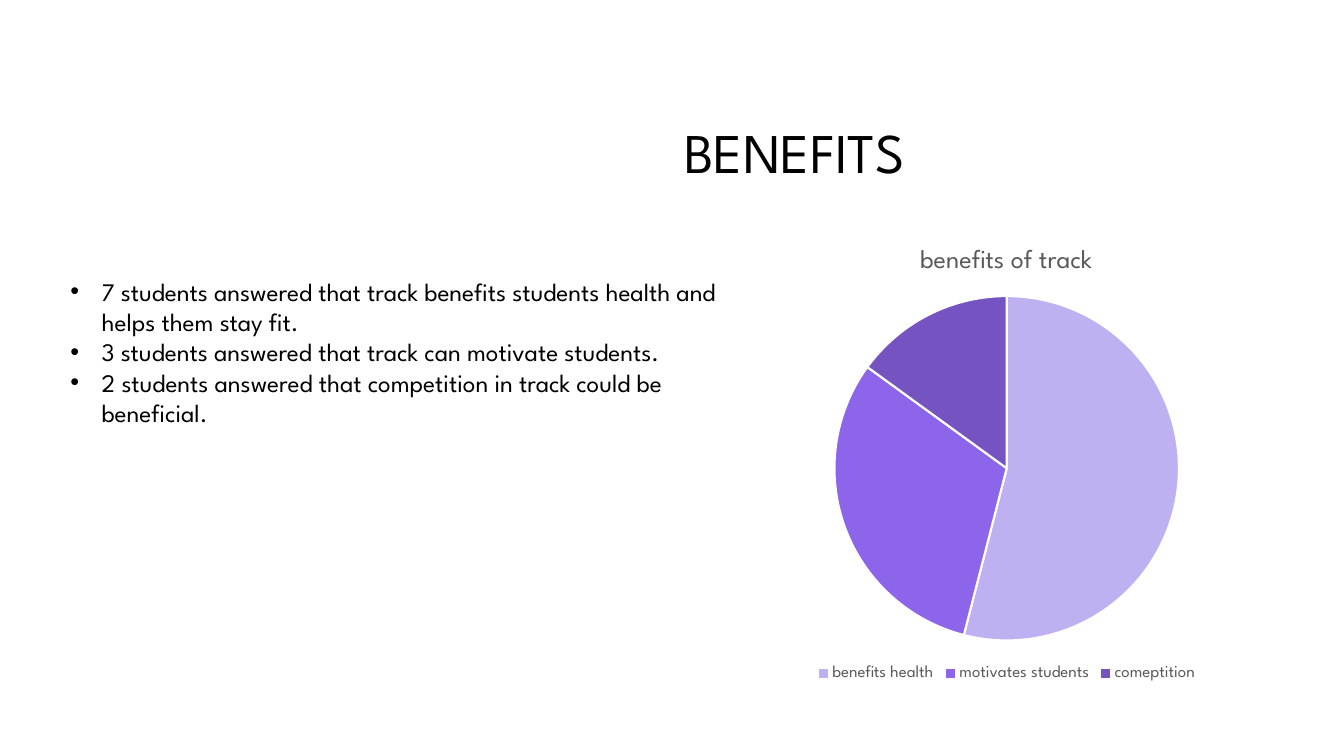
"""Build the slide on the benefits of track, with survey answers and a pie chart."""
from dataclasses import dataclass

from lxml import etree
from pptx import Presentation
from pptx.chart.data import CategoryChartData
from pptx.dml.color import RGBColor
from pptx.enum.chart import XL_CHART_TYPE as ChartType, XL_LEGEND_POSITION as LegendPosition
from pptx.enum.text import MSO_ANCHOR as Anchor, MSO_AUTO_SIZE as AutoSize, PP_ALIGN as Align
from pptx.oxml.ns import qn
from pptx.slide import Slide
from pptx.text.text import Font
from pptx.util import Inches, Pt

FONT = "League Spartan"
COLORS = {
    "ink": "000000",
    "caption": "595959",
    "border": "FFFFFF",
    "health": "BFB0F2",
    "motivation": "8D65EA",
    "competition": "7554C2",
}
SLIDE_WIDTH, SLIDE_HEIGHT = Inches(13.33), Inches(7.5)
BULLET_INDENT = Inches(0.31)


@dataclass(frozen=True)
class Area:
    """Hold a place on the slide in percent of its width and height."""

    left: float
    top: float
    width: float
    height: float

    def box(self) -> tuple[int, int, int, int]:
        """Return left, top, width and height as slide lengths."""
        return (
            round(SLIDE_WIDTH * self.left / 100),
            round(SLIDE_HEIGHT * self.top / 100),
            round(SLIDE_WIDTH * self.width / 100),
            round(SLIDE_HEIGHT * self.height / 100),
        )


@dataclass(frozen=True)
class Benefit:
    """Hold one benefit with its share of the answers."""

    label: str
    share: int
    color: str
    finding: str


HEADING_AREA = Area(23.78, 11.2, 70.67, 18.8)
PIE_AREA = Area(55.44, 30, 38.93, 60.67)
FINDINGS_AREA = Area(4.5, 35.87, 52.96, 29.6)

BENEFITS = [
    Benefit("benefits health", 54, "health",
            "7 students answered that track benefits students health and helps them stay fit."),
    Benefit("motivates students", 31, "motivation",
            "3 students answered that track can motivate students."),
    Benefit("comeptition", 15, "competition",
            "2 students answered that competition in track could be beneficial."),
]


def rgb(color: str) -> RGBColor:
    """Return the named colour."""
    return RGBColor.from_string(COLORS[color])


def style(font: Font, size: float, color: str) -> None:
    """Apply the slide's typeface with a size and a colour."""
    font.name = FONT
    font.size = Pt(size)
    font.bold = False
    font.color.rgb = rgb(color)


def add_heading(slide: Slide, text: str) -> None:
    """Place and format the slide title."""
    heading = slide.shapes.title
    heading.left, heading.top, heading.width, heading.height = HEADING_AREA.box()
    frame = heading.text_frame
    frame.text = text
    frame.auto_size = AutoSize.NONE
    frame.vertical_anchor = Anchor.MIDDLE
    paragraph = frame.paragraphs[0]
    paragraph.alignment = Align.CENTER
    paragraph.line_spacing = 0.9
    style(paragraph.runs[0].font, 40, "ink")


def add_findings(slide: Slide, benefits: list[Benefit]) -> None:
    """List the survey findings as bullets."""
    frame = slide.shapes.add_textbox(*FINDINGS_AREA.box()).text_frame
    frame.word_wrap = True
    frame.text = "\n".join(benefit.finding for benefit in benefits)
    for paragraph in frame.paragraphs:
        properties = paragraph._p.get_or_add_pPr()
        properties.set("marL", str(BULLET_INDENT))
        properties.set("indent", str(-BULLET_INDENT))
        etree.SubElement(properties, qn("a:buFont"), typeface="Arial")
        etree.SubElement(properties, qn("a:buChar"), char="•")
        style(paragraph.runs[0].font, 18, "ink")


def add_pie(slide: Slide, title: str, benefits: list[Benefit]) -> None:
    """Chart the share of answers for each benefit."""
    data = CategoryChartData()
    data.categories = [benefit.label for benefit in benefits]
    data.add_series("Series 1", [benefit.share for benefit in benefits])
    chart = slide.shapes.add_chart(ChartType.PIE, *PIE_AREA.box(), data).chart
    style(chart.font, 10, "ink")

    chart.has_title = True
    caption = chart.chart_title.text_frame
    caption.text = title
    style(caption.paragraphs[0].runs[0].font, 18.6, "caption")
    chart.chart_title.include_in_layout = False

    chart.has_legend = True
    chart.legend.position = LegendPosition.BOTTOM
    chart.legend.include_in_layout = False
    style(chart.legend.font, 12, "caption")

    plot = chart.plots[0]
    plot.vary_by_categories = True
    for index, benefit in enumerate(benefits):
        wedge = plot.series[0].points[index].format
        wedge.fill.solid()
        wedge.fill.fore_color.rgb = rgb(benefit.color)
        wedge.line.color.rgb = rgb("border")
        wedge.line.width = Pt(1.5)


def main() -> None:
    """Build and save the presentation."""
    deck = Presentation()
    deck.slide_width, deck.slide_height = SLIDE_WIDTH, SLIDE_HEIGHT
    slide = deck.slides.add_slide(deck.slide_layouts.get_by_name("Title Only"))
    add_heading(slide, "BENEFITS")
    add_pie(slide, "benefits of track", BENEFITS)
    add_findings(slide, BENEFITS)
    deck.save("out.pptx")


if __name__ == "__main__":
    main()
